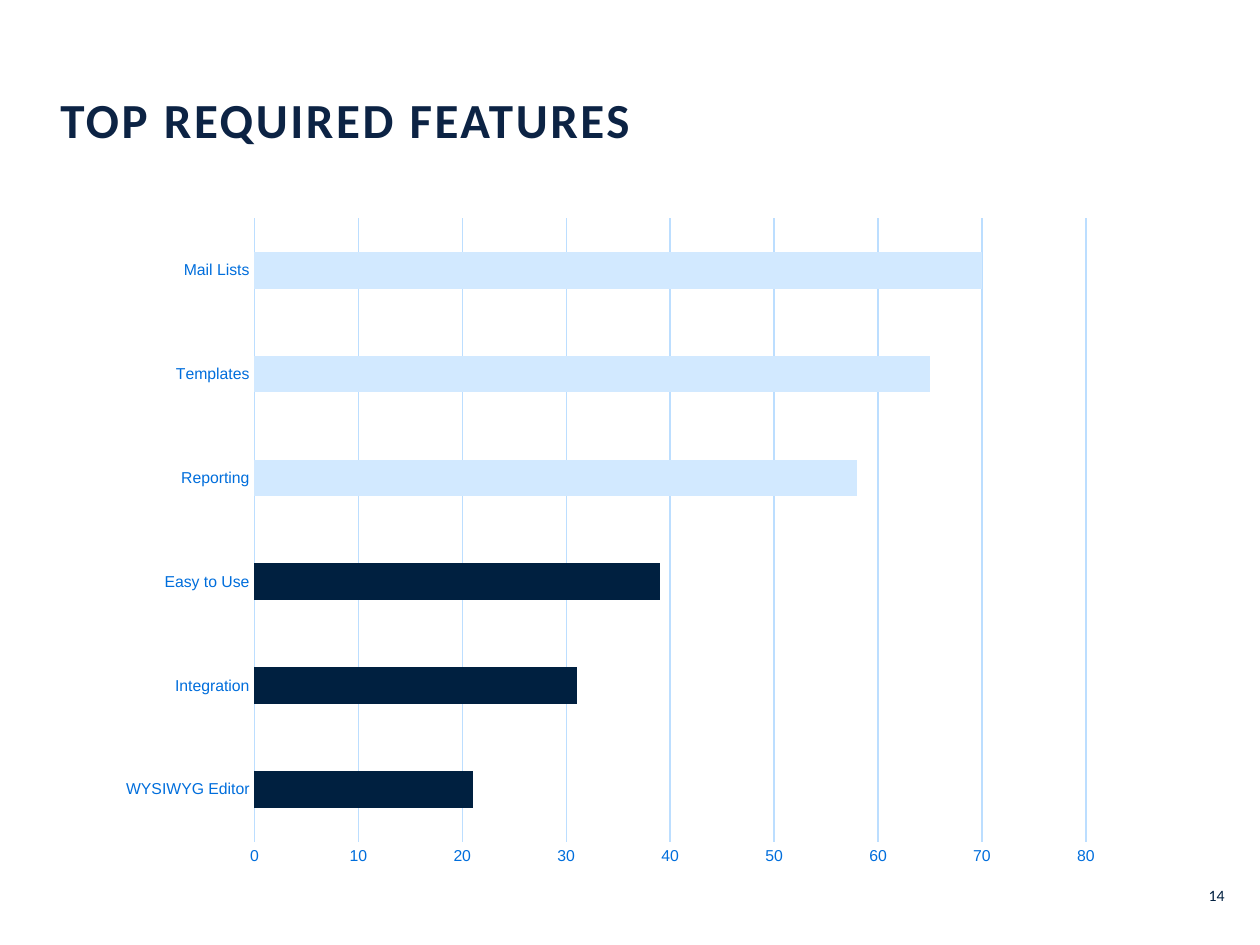
import pptx
import pptx.chart.data
import pptx.dml.color
import pptx.enum.chart
import pptx.enum.text
import pptx.oxml
import pptx.oxml.ns
import pptx.util

Inches = pptx.util.Inches
Pt = pptx.util.Pt

TITLE = "TOP REQUIRED FEATURES"
PAGE_NUMBER = "14"
FEATURES = [
    ("WYSIWYG Editor", 21),
    ("Integration", 31),
    ("Easy to Use", 39),
    ("Reporting", 58),
    ("Templates", 65),
    ("Mail Lists", 70),
]
HIGHLIGHT_FROM = 58
NAVY, PALE, BLUE, GRID = "002040", "D2E9FF", "006EDC", "BCDEFF"
CHART_BOX = (0.85, 1.62, 8.01, 5.35)
PLOT_BOX = (2.02, 1.73, 6.6, 4.95)


def color(value):
    return pptx.dml.color.RGBColor.from_string(value)


def place(shape, left, top, width, height):
    shape.left, shape.top = Inches(left), Inches(top)
    shape.width, shape.height = Inches(width), Inches(height)


def format_font(font, size, fill, name="Arial", bold=False):
    font.size, font.name, font.bold = Pt(size), name, bold
    font.color.rgb = color(fill)


def write_text(shape, text, size, fill, align="LEFT", anchor="TOP",
               bold=False, line_spacing=None, tracking=0):
    frame = shape.text_frame
    frame.word_wrap = True
    frame.auto_size = pptx.enum.text.MSO_AUTO_SIZE.NONE
    frame.margin_left = frame.margin_right = 0
    frame.margin_top = frame.margin_bottom = 0
    frame.vertical_anchor = getattr(pptx.enum.text.MSO_ANCHOR, anchor)
    paragraph = frame.paragraphs[0]
    paragraph.alignment = getattr(pptx.enum.text.PP_ALIGN, align)
    paragraph.space_before = Pt(0)
    if line_spacing:
        paragraph.line_spacing = Pt(line_spacing)
    run = paragraph.add_run()
    run.text = text
    format_font(run.font, size, fill, "Calibri", bold)
    if tracking:
        run.font._element.set("spc", str(int(tracking * 100)))


def format_line(line, fill):
    line.color.rgb = color(fill)
    line.width = Pt(0.75)


def format_axis(axis):
    axis.major_tick_mark = pptx.enum.chart.XL_TICK_MARK.NONE
    axis.minor_tick_mark = pptx.enum.chart.XL_TICK_MARK.NONE
    format_font(axis.tick_labels.font, 9, BLUE)


def set_plot_area(chart):
    left, top, width, height = CHART_BOX
    x, y, plot_width, plot_height = PLOT_BOX
    fractions = {"x": (x - left) / width, "y": (y - top) / height,
                 "w": plot_width / width, "h": plot_height / height}
    modes = "".join(f'<c:{key}Mode val="edge"/>' for key in "xy")
    values = "".join(f'<c:{key} val="{value:.3f}"/>'
                     for key, value in fractions.items())
    layout = pptx.oxml.parse_xml(
        f'<c:layout {pptx.oxml.ns.nsdecls("c")}><c:manualLayout>'
        f'<c:layoutTarget val="inner"/>{modes}{values}'
        '</c:manualLayout></c:layout>')
    plot_area = chart._chartSpace.chart.plotArea
    for existing in plot_area.findall(pptx.oxml.ns.qn("c:layout")):
        plot_area.remove(existing)
    plot_area.insert(0, layout)


def add_feature_chart(slide):
    data = pptx.chart.data.CategoryChartData()
    data.categories = [name for name, value in FEATURES]
    data.add_series("Series 1", [value for name, value in FEATURES])
    chart = slide.shapes.add_chart(
        pptx.enum.chart.XL_CHART_TYPE.BAR_CLUSTERED,
        *map(Inches, CHART_BOX), data).chart
    chart.has_legend = False
    chart.has_title = False
    format_font(chart.font, 10, NAVY)
    set_plot_area(chart)

    format_axis(chart.category_axis)
    format_line(chart.category_axis.format.line, GRID)
    value_axis = chart.value_axis
    format_axis(value_axis)
    value_axis.minimum_scale, value_axis.maximum_scale = 0, 80
    value_axis.major_unit = 10
    value_axis.format.line.fill.background()
    value_axis.has_major_gridlines = True
    format_line(value_axis.major_gridlines.format.line, GRID)

    plot = chart.plots[0]
    plot.gap_width = 182
    plot.vary_by_categories = False
    series = plot.series[0]
    series.format.fill.solid()
    series.format.fill.fore_color.rgb = color(NAVY)
    for index, (name, value) in enumerate(FEATURES):
        if value >= HIGHLIGHT_FROM:
            fill = series.points[index].format.fill
            fill.solid()
            fill.fore_color.rgb = color(PALE)


def main():
    presentation = pptx.Presentation()
    presentation.slide_width = Inches(10)
    presentation.slide_height = Inches(7.5)
    slide = presentation.slides.add_slide(presentation.slide_layouts[5])

    title = slide.shapes.title
    place(title, 0.48, 0.69, 8.61, 0.68)
    write_text(title, TITLE, 28, "0C2344", anchor="MIDDLE", bold=True,
               line_spacing=21, tracking=1.5)
    add_feature_chart(slide)
    number = slide.shapes.add_textbox(0, 0, 0, 0)
    place(number, 9.39, 7.03, 0.33, 0.21)
    write_text(number, PAGE_NUMBER, 9, NAVY, align="RIGHT")
    presentation.save("out.pptx")


if __name__ == "__main__":
    main()
